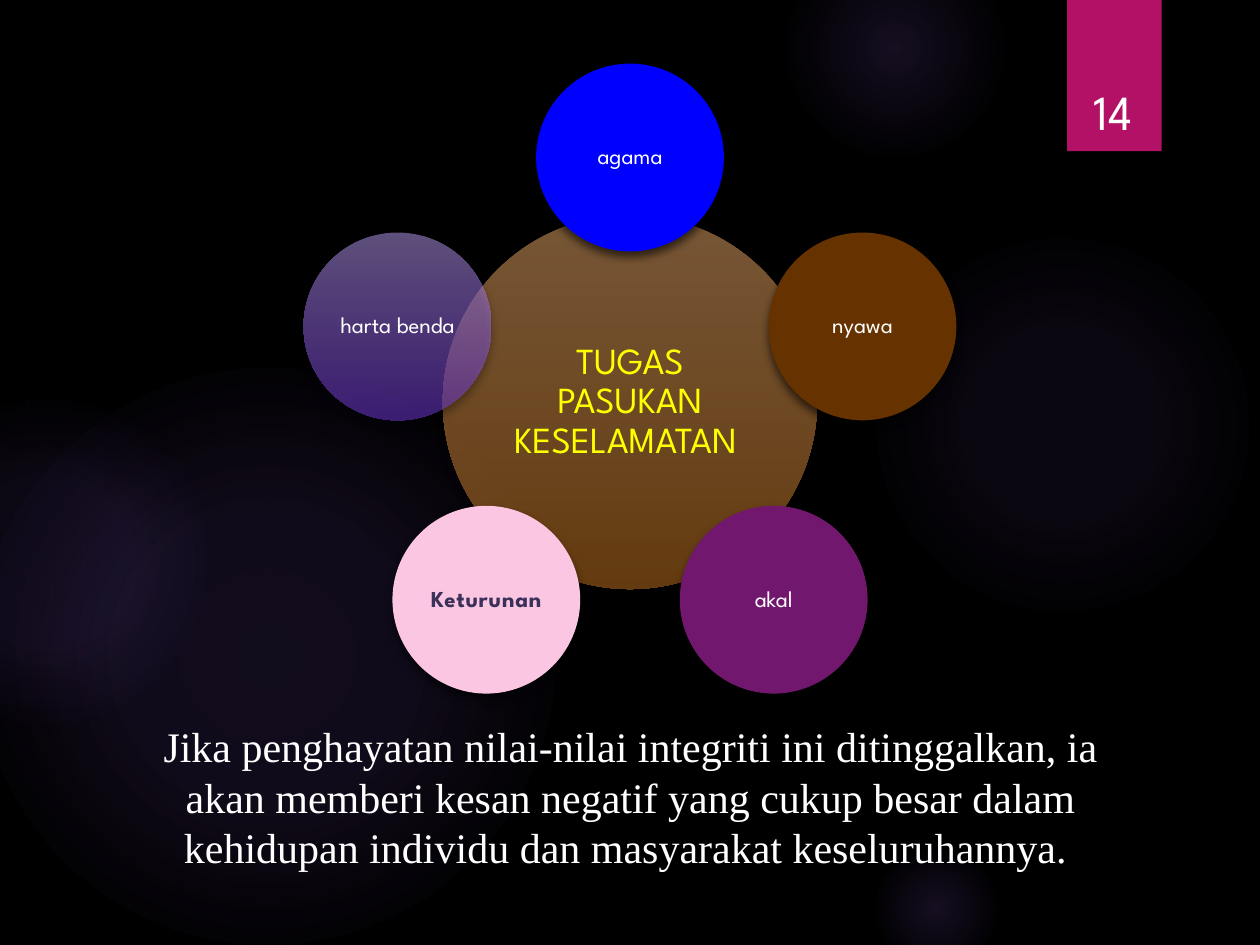
"""Build a slide showing five values around the duty of the security forces."""
from math import cos, radians, sin

from lxml.etree import SubElement
from pptx import Presentation
from pptx.dml.color import RGBColor
from pptx.enum.shapes import MSO_SHAPE
from pptx.enum.text import MSO_ANCHOR, PP_ALIGN
from pptx.oxml.ns import qn
from pptx.util import Inches, Pt

COLORS = {
    "black": "000000", "white": "FFFFFF", "yellow": "FFFF00", "glow": "9B6BF2",
    "tab": "B31166", "blue": "0000FF", "brown": "663300", "purple": "71186E",
    "pink": "FAC6E1", "indigo": "3B3059", "tan": "EEAD6D", "orange": "C97721",
    "lilac": "BD9EF6", "violet": "7438E0",
}
FONT = "League Spartan"
PAGE_NUMBER = "14"
HUB_TEXT = "TUGAS PASUKAN KESELAMATAN "
HUB_STOPS = [(0, "tan", 50), (100, "orange", 50)]
VALUES = [
    ("agama", "blue"),
    ("nyawa", "brown"),
    ("akal", "purple"),
    ("Keturunan", "pink"),
    ("harta benda", [(0, "lilac", 50), (100, "violet", 50)]),
]
STATEMENT = ("Jika penghayatan nilai-nilai integriti ini ditinggalkan, ia akan memberi "
             "kesan negatif yang cukup besar dalam kehidupan individu dan masyarakat "
             "keseluruhannya. ")
GLOWS = [
    (8.43, 3.37, 3.08, [(0, 7), (36, 6), (69, 0)]),
    (7.1, 0.38, 1.75, [(0, 14), (36, 7), (73, 0)]),
    (7.43, 7.21, 1.08, [(0, 14), (36, 7), (66, 0)]),
    (2.12, 5.21, 4.58, [(0, 11), (36, 10), (75, 0)]),
    (0.37, 4.46, 2.58, [(0, 8), (36, 8), (72, 0)]),
]
CENTER_X, CENTER_Y, ORBIT = 5, 3.19, 1.94
HUB_SIZE, VALUE_SIZE = 2.97, 1.49
CIRCLE_SHADOW, TAB_SHADOW = (60, 5, 3), (45, 3, 2)


def color(name):
    return RGBColor.from_string(COLORS[name])


def add_color(parent, name, alpha):
    element = SubElement(parent, qn("a:srgbClr"), val=COLORS[name])
    SubElement(element, qn("a:alpha"), val=str(alpha * 1000))


def add_gradient(shape, stops, radial):
    gradient = SubElement(shape._element.spPr, qn("a:gradFill"), rotWithShape="1")
    stop_list = SubElement(gradient, qn("a:gsLst"))
    for position, name, alpha in stops:
        stop = SubElement(stop_list, qn("a:gs"), pos=str(position * 1000))
        add_color(stop, name, alpha)
    if radial:
        center = SubElement(gradient, qn("a:path"), path="circle")
        SubElement(center, qn("a:fillToRect"), l="50000", t="50000", r="50000", b="50000")
    else:
        SubElement(gradient, qn("a:lin"), ang="5400000", scaled="0")


def add_shape(slide, kind, box, fill, shadow=None, radial=False):
    shape = slide.shapes.add_shape(kind, *map(Inches, box))
    if isinstance(fill, str):
        shape.fill.solid()
        shape.fill.fore_color.rgb = color(fill)
    else:
        add_gradient(shape, fill, radial)
    shape.line.fill.background()
    shape.shadow.inherit = False
    if shadow:
        alpha, blur, distance = shadow
        effects = shape._element.spPr.find(qn("a:effectLst"))
        outer = SubElement(effects, qn("a:outerShdw"), blurRad=str(Pt(blur)),
                           dist=str(Pt(distance)), dir="5400000", rotWithShape="0")
        add_color(outer, "black", alpha)
    return shape


def add_circle(slide, x, y, size, fill, shadow=None, radial=False):
    box = (x - size / 2, y - size / 2, size, size)
    return add_shape(slide, MSO_SHAPE.OVAL, box, fill, shadow, radial)


def write(shape, text, size, name="white", font=FONT, anchor=MSO_ANCHOR.MIDDLE,
          spacing=None, inset=None):
    frame = shape.text_frame
    frame.word_wrap = True
    frame.vertical_anchor = anchor
    if inset is not None:
        frame.margin_left = frame.margin_right = Inches(inset)
        frame.margin_top = frame.margin_bottom = Inches(inset)
    paragraph = frame.paragraphs[0]
    paragraph.alignment = PP_ALIGN.CENTER
    paragraph.line_spacing = spacing
    run = paragraph.add_run()
    run.text = text
    run.font.size = Pt(size)
    run.font.name = font
    run.font.color.rgb = color(name)
    return run


def main():
    presentation = Presentation()
    presentation.slide_width, presentation.slide_height = Inches(10), Inches(7.5)
    slide = presentation.slides.add_slide(presentation.slide_layouts[6])
    slide.background.fill.solid()
    slide.background.fill.fore_color.rgb = color("black")

    for x, y, size, fades in GLOWS:
        stops = [(position, "glow", alpha) for position, alpha in fades]
        add_circle(slide, x, y, size, stops, radial=True)

    add_shape(slide, MSO_SHAPE.RECTANGLE, (8.47, 0, 0.75, 1.2), "tab", TAB_SHADOW)
    number = slide.shapes.add_textbox(*map(Inches, (8.49, 0.32, 0.69, 0.84)))
    write(number, PAGE_NUMBER, 28, anchor=MSO_ANCHOR.BOTTOM)

    hub = add_circle(slide, CENTER_X, CENTER_Y, HUB_SIZE, HUB_STOPS, CIRCLE_SHADOW)
    write(hub, HUB_TEXT, 21, "yellow", spacing=0.9, inset=0.03)

    for index, (label, fill) in enumerate(VALUES):
        angle = radians(index * 360 / len(VALUES) - 90)
        x, y = CENTER_X + ORBIT * cos(angle), CENTER_Y + ORBIT * sin(angle)
        circle = add_circle(slide, x, y, VALUE_SIZE, fill, CIRCLE_SHADOW)
        strong = fill == "pink"
        run = write(circle, label, 13, "indigo" if strong else "white",
                    spacing=0.9, inset=0.02)
        if strong:
            run.font.bold = True
            run.font._element.set("spc", "50")

    statement = slide.shapes.add_textbox(*map(Inches, (1.17, 5.67, 7.67, 1.31)))
    write(statement, STATEMENT, 24, font="Times New Roman", anchor=MSO_ANCHOR.TOP)
    presentation.save("out.pptx")


if __name__ == "__main__":
    main()
